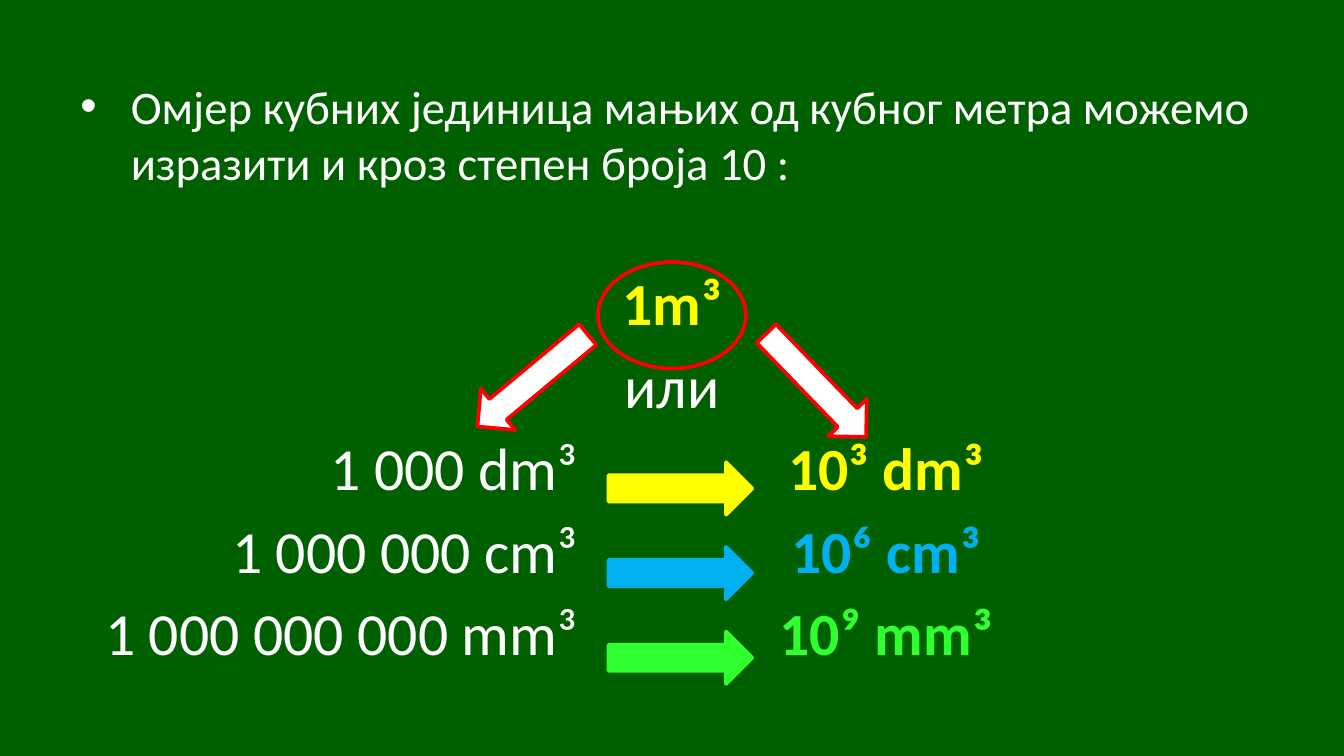
from dataclasses import dataclass
from lxml.etree import SubElement
from pptx import Presentation
from pptx.dml.color import RGBColor
from pptx.enum.shapes import MSO_SHAPE
from pptx.enum.text import PP_ALIGN
from pptx.oxml.ns import qn
from pptx.util import Pt


@dataclass(frozen=True)
class Theme:
    board: str = "006000"
    white: str = "FFFFFF"
    red: str = "FF0000"
    yellow: str = "FFFF00"
    blue: str = "00B0F0"
    green: str = "30FF30"
    font: str = "Calibri"
    intro_size: float = 25
    unit_size: float = 32
    line_width: float = 2


THEME = Theme()
INTRO = "Омјер кубних јединица мањих од кубног метра можемо изразити и кроз степен броја 10 :"
CONVERSIONS = [
    ("1 000 dm³", "10³ dm³", THEME.yellow),
    ("1 000 000 cm³", "10⁶ cm³", THEME.blue),
    ("1 000 000 000 mm³", "10⁹ mm³", THEME.green),
]


def add_span(para, text, size, color, bold=False):
    span = para.add_run()
    span.text = text
    span.font.name = THEME.font
    span.font.size = Pt(size)
    span.font.bold = bold
    span.font.color.rgb = RGBColor.from_string(color)


def set_bullet(para, indent):
    properties = para._p.get_or_add_pPr()
    properties.set("marL", str(Pt(indent)))
    properties.set("indent", str(-Pt(indent)))
    SubElement(properties, qn("a:buFont"), typeface="Arial")
    SubElement(properties, qn("a:buChar"), char="•")


def set_tabs(para, stops):
    tab_list = SubElement(para._p.get_or_add_pPr(), qn("a:tabLst"))
    for position, alignment in stops:
        SubElement(tab_list, qn("a:tab"), pos=str(Pt(position)), algn=alignment)


def add_outline(page, kind, box, fill, line, rotation=0):
    shape = page.shapes.add_shape(kind, *map(Pt, box))
    shape.shadow.inherit = False
    shape.rotation = rotation
    if fill:
        shape.fill.solid()
        shape.fill.fore_color.rgb = RGBColor.from_string(fill)
    else:
        shape.fill.background()
    shape.line.color.rgb = RGBColor.from_string(line)
    shape.line.width = Pt(THEME.line_width)


def add_lesson_text(page, box):
    frame = page.shapes.add_textbox(*map(Pt, box)).text_frame
    frame.word_wrap = True

    # Introduction
    para = frame.paragraphs[0]
    set_bullet(para, 27)
    add_span(para, INTRO, THEME.intro_size, THEME.white)

    # Starting unit
    for text, color, bold, gap in (("1m³", THEME.yellow, True, 41),
                                   ("или", THEME.white, False, 5.8)):
        para = frame.add_paragraph()
        para.alignment = PP_ALIGN.CENTER
        para.space_before = Pt(gap)
        add_span(para, text, THEME.unit_size, color, bold)

    # Conversions: number ends at the first stop, power is centred on the second
    for number, power, color in CONVERSIONS:
        para = frame.add_paragraph()
        para.space_before = Pt(5.8)
        set_tabs(para, [(266.5, "r"), (431.5, "ctr")])
        add_span(para, f"\t{number}\t", THEME.unit_size, THEME.white)
        add_span(para, power, THEME.unit_size, color, True)


def add_conversion_arrows(page, box):
    left, top, width, height = box
    arrow_height = 28
    pitch = (height - arrow_height) / (len(CONVERSIONS) - 1)
    for row, (_, _, color) in enumerate(CONVERSIONS):
        arrow_box = (left, top + row * pitch, width, arrow_height)
        add_outline(page, MSO_SHAPE.RIGHT_ARROW, arrow_box, color, color)


def add_unit_branches(page, box):
    left, top, width, height = box
    # Arrows leaving the circled unit on both sides
    for offset, drop, rotation in ((-49.5, 25, 50.2), (102.5, 27.5, 316)):
        arrow_box = (left + offset, top + drop, 28.8, 77)
        add_outline(page, MSO_SHAPE.DOWN_ARROW, arrow_box, THEME.white, THEME.red, rotation)
    add_outline(page, MSO_SHAPE.OVAL, box, None, THEME.red)


def main():
    deck = Presentation()
    deck.slide_width, deck.slide_height = Pt(720), Pt(405)
    page = deck.slides.add_slide(deck.slide_layouts[6])
    page.background.fill.solid()
    page.background.fill.fore_color.rgb = RGBColor.from_string(THEME.board)

    add_lesson_text(page, (36, 38, 648, 340))
    add_conversion_arrows(page, (326, 247.7, 77, 118.7))
    add_unit_branches(page, (320.4, 140.4, 79.2, 57))
    deck.save("out.pptx")


if __name__ == "__main__":
    main()
